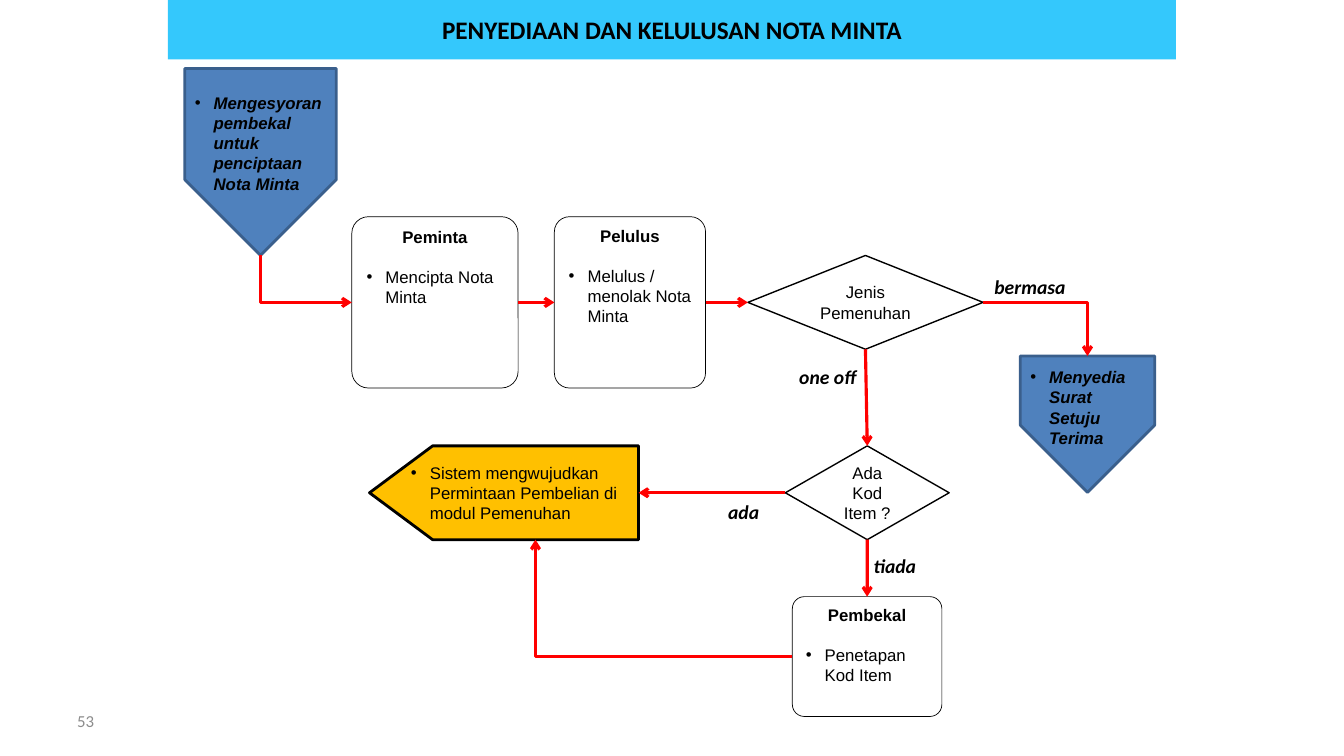
from lxml.etree import SubElement
from pptx import Presentation
from pptx.dml.color import RGBColor
from pptx.enum.shapes import MSO_CONNECTOR, MSO_SHAPE
from pptx.enum.text import MSO_ANCHOR, MSO_AUTO_SIZE, PP_ALIGN
from pptx.oxml.ns import qn
from pptx.util import Pt

INDENT = 13.5
BODY = {"name": "Arial", "size": Pt(12), "bold": False}
HEADING = BODY | {"bold": True}
EMPHASIS = HEADING | {"italic": True}
LABEL = {"name": "Calibri", "size": Pt(14), "bold": True, "italic": True}
TITLE = {"name": "Calibri", "size": Pt(18), "bold": True}
NUMBER = {"name": "Calibri", "size": Pt(12)}


def colour(value):
    return RGBColor.from_string(value)


class FlowSlide:
    """Holds the slide and the shared style of the flow chart."""

    arrow_colour = "FF0000"
    arrow_width = 2.25

    def __init__(self, page):
        self.page = page

    def add_text(self, para, text, style, align=PP_ALIGN.CENTER, ink="000000", bullet=False):
        if bullet:
            properties = para._p.get_or_add_pPr()
            properties.set("marL", str(Pt(INDENT)))
            properties.set("indent", str(-Pt(INDENT)))
            SubElement(properties, qn("a:buFont")).set("typeface", "Arial")
            SubElement(properties, qn("a:buChar")).set("char", "•")
        para.alignment = align
        span = para.add_run()
        span.text = text
        for name, value in style.items():
            setattr(span.font, name, value)
        span.font.color.rgb = colour(ink)

    def title(self, text, left, top, width, height, fill):
        box = self.page.shapes.title
        box.left, box.top, box.width, box.height = map(Pt, (left, top, width, height))
        box.fill.solid()
        box.fill.fore_color.rgb = colour(fill)
        box.text_frame.auto_size = MSO_AUTO_SIZE.NONE
        box.text_frame.vertical_anchor = MSO_ANCHOR.MIDDLE
        self.add_text(box.text_frame.paragraphs[0], text, TITLE)

    def label(self, text, left, top, width, height, style=LABEL, **options):
        box = self.page.shapes.add_textbox(*map(Pt, (left, top, width, height)))
        box.text_frame.word_wrap = True
        box.text_frame.vertical_anchor = MSO_ANCHOR.MIDDLE
        self.add_text(box.text_frame.paragraphs[0], text, style, **options)

    def shape(self, kind, left, top, width, height, line, weight, fill=None):
        box = self.page.shapes.add_shape(kind, *map(Pt, (left, top, width, height)))
        box.shadow.inherit = False
        if fill:
            box.fill.solid()
            box.fill.fore_color.rgb = colour(fill)
        else:
            box.fill.background()
        box.line.color.rgb = colour(line)
        box.line.width = Pt(weight)
        box.text_frame.word_wrap = True
        box.text_frame.vertical_anchor = MSO_ANCHOR.MIDDLE
        return box

    def decision(self, text, left, top, width, height):
        box = self.shape(MSO_SHAPE.FLOWCHART_DECISION, left, top, width, height, "000000", 1)
        self.add_text(box.text_frame.paragraphs[0], text, BODY)
        return box

    def role(self, heading, task, left, top, width, height):
        box = self.shape(MSO_SHAPE.ROUNDED_RECTANGLE, left, top, width, height,
                         "000000", 0.5, "FFFFFF")
        box.adjustments[0] = 0.1
        frame = box.text_frame
        frame.vertical_anchor = MSO_ANCHOR.TOP
        self.add_text(frame.paragraphs[0], heading, HEADING)
        para = frame.add_paragraph()
        self.add_text(para, task, BODY, PP_ALIGN.LEFT, bullet=True)
        para.space_before = Pt(14)
        return box

    def down_pentagon(self, text, left, top, width, height):
        # The shape lies on its side and is turned to point down
        box = self.shape(MSO_SHAPE.PENTAGON, left + (width - height) / 2,
                         top + (height - width) / 2, height, width, "3A5F8C", 2, "4F81BD")
        box.rotation = 90
        box.text_frame._txBody.bodyPr.set("vert", "vert270")
        self.add_text(box.text_frame.paragraphs[0], text, EMPHASIS, PP_ALIGN.LEFT, bullet=True)

    def left_pentagon(self, text, left, top, width, height):
        box = self.shape(MSO_SHAPE.PENTAGON, left, top, width, height, "000000", 2, "FFC000")
        box.adjustments[0] = 0.673
        box._element.spPr.find(qn("a:xfrm")).set("flipH", "1")
        self.add_text(box.text_frame.paragraphs[0], text, BODY, PP_ALIGN.LEFT, bullet=True)

    def connector(self, kind, start, end):
        arrow = self.page.shapes.add_connector(kind, *map(Pt, (*start, *end)))
        arrow.line.color.rgb = colour(self.arrow_colour)
        arrow.line.width = Pt(self.arrow_width)
        properties = arrow._element.spPr
        SubElement(properties.find(qn("a:ln")), qn("a:tailEnd")).set("type", "arrow")
        SubElement(properties, qn("a:effectLst"))
        return arrow

    def join(self, source, source_side, target, target_side):
        arrow = self.connector(MSO_CONNECTOR.STRAIGHT, (0, 0), (0, 0))
        arrow.begin_connect(source, source_side)
        arrow.end_connect(target, target_side)

    def elbow(self, start, end, vertical_first=False):
        if vertical_first:
            # A quarter turn about the centre makes the first leg vertical
            (x1, y1), (x2, y2) = start, end
            x, y = (x1 + x2) / 2, (y1 + y2) / 2
            dx, dy = (x2 - x1) / 2, (y2 - y1) / 2
            start, end = (x + dy, y - dx), (x - dy, y + dx)
        arrow = self.connector(MSO_CONNECTOR.ELBOW, start, end)
        properties = arrow._element.spPr
        properties.find(qn("a:prstGeom")).set("prst", "bentConnector2")
        if vertical_first:
            properties.find(qn("a:xfrm")).set("rot", str(270 * 60000))


def main():
    deck = Presentation()
    deck.slide_width, deck.slide_height = Pt(960), Pt(540)
    flow = FlowSlide(deck.slides.add_slide(deck.slide_layouts[5]))
    top, left, bottom, right = range(4)

    # Header and page number
    flow.title("PENYEDIAAN DAN KELULUSAN NOTA MINTA", 120, 0, 720, 42.5, "34C8FC")
    flow.label("53", 48, 500.5, 224, 28.8, NUMBER, align=PP_ALIGN.LEFT, ink="8C8C8C")

    # Roles and decisions
    requester = flow.role("Peminta", "Mencipta Nota Minta", 251.3, 154.8, 118.8, 122.4)
    approver = flow.role("Pelulus", "Melulus / menolak Nota Minta", 396, 154.8, 108, 122.4)
    supplier = flow.role("Pembekal", "Penetapan Kod Item", 566, 426.2, 106.8, 85.6)
    fulfilment = flow.decision("Jenis Pemenuhan", 534.2, 182.5, 168, 67)
    item_code = flow.decision("Ada Kod Item ?", 561, 318.5, 117, 67)

    # Inputs and outcomes
    flow.down_pentagon("Mengesyoran pembekal untuk penciptaan Nota Minta",
                       132, 49, 108.2, 133.4)
    flow.down_pentagon("Menyedia Surat Setuju Terima", 728.8, 254.3, 96, 97.4)
    flow.left_pentagon("Sistem mengwujudkan Permintaan Pembelian di modul Pemenuhan",
                       264, 318.5, 192.2, 67)

    # Arrows
    flow.join(requester, right, approver, left)
    flow.join(approver, right, fulfilment, left)
    flow.join(fulfilment, bottom, item_code, top)
    flow.join(item_code, bottom, supplier, top)
    flow.connector(MSO_CONNECTOR.STRAIGHT, (561, 352), (456.2, 352))
    flow.elbow((702.2, 216), (776.8, 254.3))
    flow.elbow((566, 469), (382.5, 385.5))
    flow.elbow((186.1, 182.4), (251.3, 216), vertical_first=True)

    # Arrow labels
    for text, x, y in (("one off", 558, 257.8), ("bermasa", 702.5, 193.5),
                       ("tiada", 606, 393), ("ada", 498, 354)):
        flow.label(text, x, y, 66.5, 22.3)

    deck.save("out.pptx")


if __name__ == "__main__":
    main()
